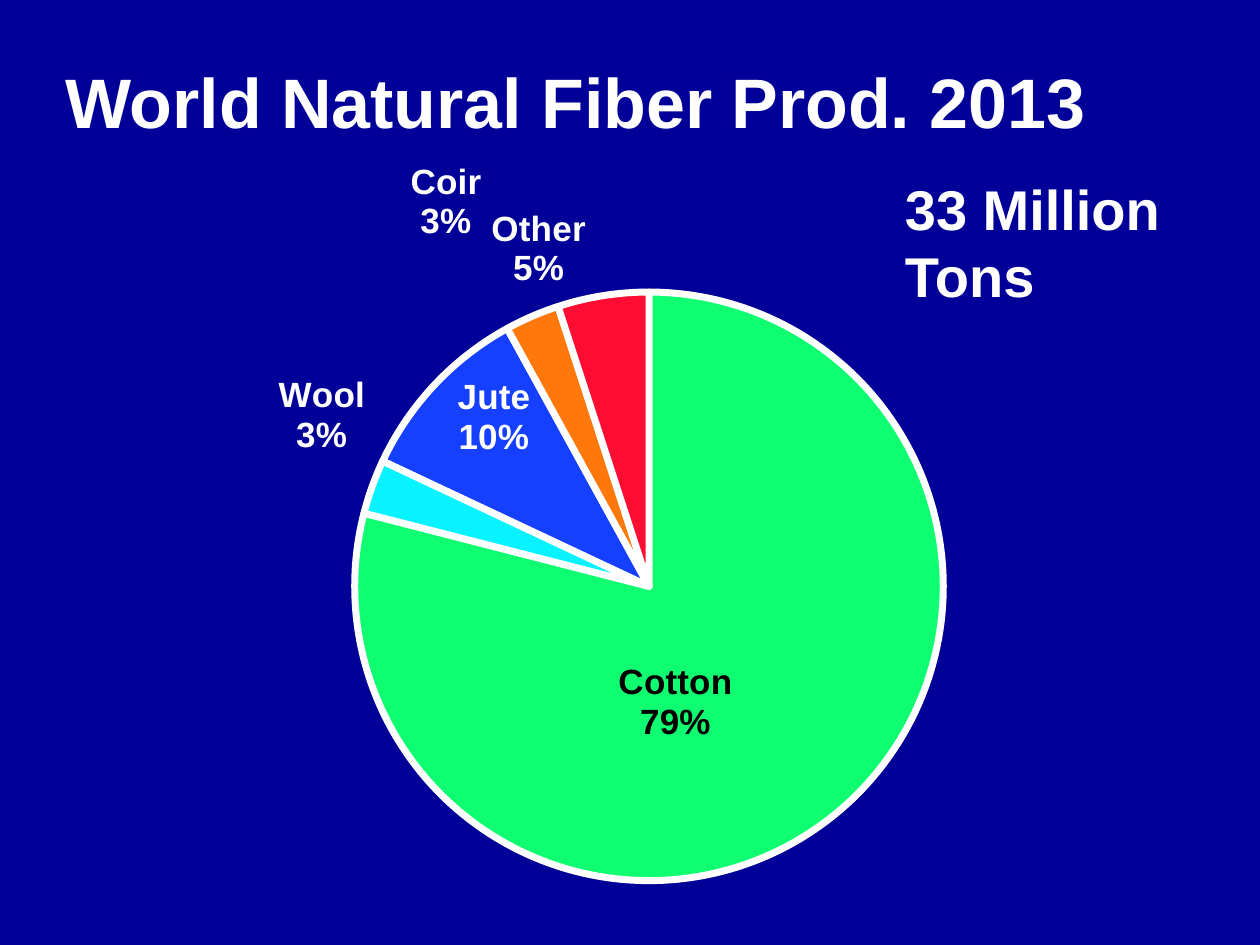
from dataclasses import dataclass

from lxml.etree import SubElement
from pptx import Presentation
from pptx.chart.data import CategoryChartData
from pptx.dml.color import RGBColor
from pptx.enum.chart import XL_CHART_TYPE, XL_LABEL_POSITION
from pptx.enum.text import MSO_ANCHOR, PP_ALIGN
from pptx.oxml import parse_xml
from pptx.oxml.ns import nsdecls, qn
from pptx.util import Pt

COLORS = {
    "background": "000099", "text": "FFFFFF", "dark": "000000",
    "Cotton": "0FFE71", "Wool": "06F3FF", "Jute": "1640FF",
    "Coir": "FE780B", "Other": "FF0C33",
}
SHARES = {"Cotton": 79, "Wool": 3, "Jute": 10, "Coir": 3, "Other": 5}
INSIDE, OUTSIDE = XL_LABEL_POSITION.CENTER, XL_LABEL_POSITION.OUTSIDE_END
LABELS = {
    "Cotton": (INSIDE, -0.04, 0, "dark"),
    "Wool": (OUTSIDE, 0, -0.03, "text"),
    "Jute": (INSIDE, -0.03, -0.07, "text"),
    "Coir": (OUTSIDE, -0.03, -0.07, "text"),
    "Other": (OUTSIDE, -0.01, 0, "text"),
}
PLOT = {"x": 0.3, "y": 0.2, "w": 0.37, "h": 0.66}


def rgb(name):
    """Return the named colour."""
    return RGBColor.from_string(COLORS[name])


def layout_xml(values, modes):
    """Return a manual chart layout element."""
    settings = [(f"{axis}Mode", mode) for axis, mode in modes.items()]
    settings += values.items()
    body = "".join(f'<c:{tag} val="{value}"/>' for tag, value in settings)
    return parse_xml(f'<c:layout {nsdecls("c")}><c:manualLayout>'
                     f'{body}</c:manualLayout></c:layout>')


@dataclass
class SlideBuilder:
    """Hold the style and the current slide."""
    page: object
    font: str = "Arial"

    def style(self, font, size, color="text"):
        """Apply the bold slide typeface."""
        for name, value in {"name": self.font, "size": Pt(size), "bold": True}.items():
            setattr(font, name, value)
        font.color.rgb = rgb(color)

    def fill_text(self, box, text, size):
        """Write left-aligned text into a box."""
        frame = box.text_frame
        frame.word_wrap = True
        frame.vertical_anchor = MSO_ANCHOR.TOP
        para = frame.paragraphs[0]
        para.alignment = PP_ALIGN.LEFT
        span = para.add_run()
        span.text = text
        self.style(span.font, size)

    def title(self, text, size, left, top, width, height):
        """Place and fill the title placeholder."""
        box = self.page.shapes.title
        bounds = {"left": left, "top": top, "width": width, "height": height}
        for name, value in bounds.items():
            setattr(box, name, Pt(value))
        self.fill_text(box, text, size)

    def text(self, text, size, *bounds):
        """Add a text box."""
        box = self.page.shapes.add_textbox(*map(Pt, bounds))
        self.fill_text(box, text, size)

    def pie(self, shares, *bounds):
        """Add the pie chart with coloured slices and labels."""
        data = CategoryChartData()
        data.categories = list(shares)
        data.add_series("Series 1", list(shares.values()))
        chart = self.page.shapes.add_chart(
            XL_CHART_TYPE.PIE, *map(Pt, bounds), data).chart
        chart.has_legend = chart.has_title = False
        self.style(chart.font, 20)
        plot = chart.plots[0]
        plot.vary_by_categories = True
        series = plot.series[0]
        labels = series.data_labels
        options = {"show_percentage": True, "show_category_name": True,
                   "show_value": False, "number_format": "0%",
                   "number_format_is_linked": False}
        for name, value in options.items():
            setattr(labels, name, value)
        self.style(labels.font, 20)
        for index, category in enumerate(shares):
            self.slice(series.points[index], category)
        self.arrange(series, plot)

    def slice(self, point, category):
        """Colour one slice and its label."""
        point.format.fill.solid()
        point.format.fill.fore_color.rgb = rgb(category)
        point.format.line.color.rgb = rgb("text")
        point.format.line.width = Pt(4)
        position, _, _, color = LABELS[category]
        self.style(point.data_label.font, 20, color)
        point.data_label.position = position

    def arrange(self, series, plot):
        """Set label contents and offsets and the plot area."""
        shown = {"showVal": "0", "showCatName": "1", "showPercent": "1",
                 "showLeaderLines": "0"}
        root = series._element
        for tag, value in shown.items():
            for flag in root.iter(qn(f"c:{tag}")):
                flag.set("val", value)
        for label, (_, x, y, _) in zip(root.iter(qn("c:dLbl")), LABELS.values()):
            label.find(qn("c:idx")).addnext(layout_xml({"x": x, "y": y}, {}))
            SubElement(label, qn("c:separator")).text = "\n"
        area = plot._element.getparent()
        for old in area.findall(qn("c:layout")):
            area.remove(old)
        modes = {"x": "edge", "y": "edge"}
        layout = layout_xml(PLOT, modes)
        layout[0].insert(0, parse_xml(
            f'<c:layoutTarget {nsdecls("c")} val="inner"/>'))
        area.insert(0, layout)


def main():
    """Build and save the fiber production slide."""
    deck = Presentation()
    deck.slide_width, deck.slide_height = Pt(720), Pt(540)
    page = deck.slides.add_slide(deck.slide_layouts[5])
    page.background.fill.solid()
    page.background.fill.fore_color.rgb = rgb("background")
    builder = SlideBuilder(page)
    builder.pie(SHARES, -70, 42, 909, 553)
    builder.title("World Natural Fiber Prod. 2013", 40, 30, 30, 672, 56)
    builder.text("33 Million Tons", 32, 510, 96, 180, 85)
    deck.save("out.pptx")


if __name__ == "__main__":
    main()
